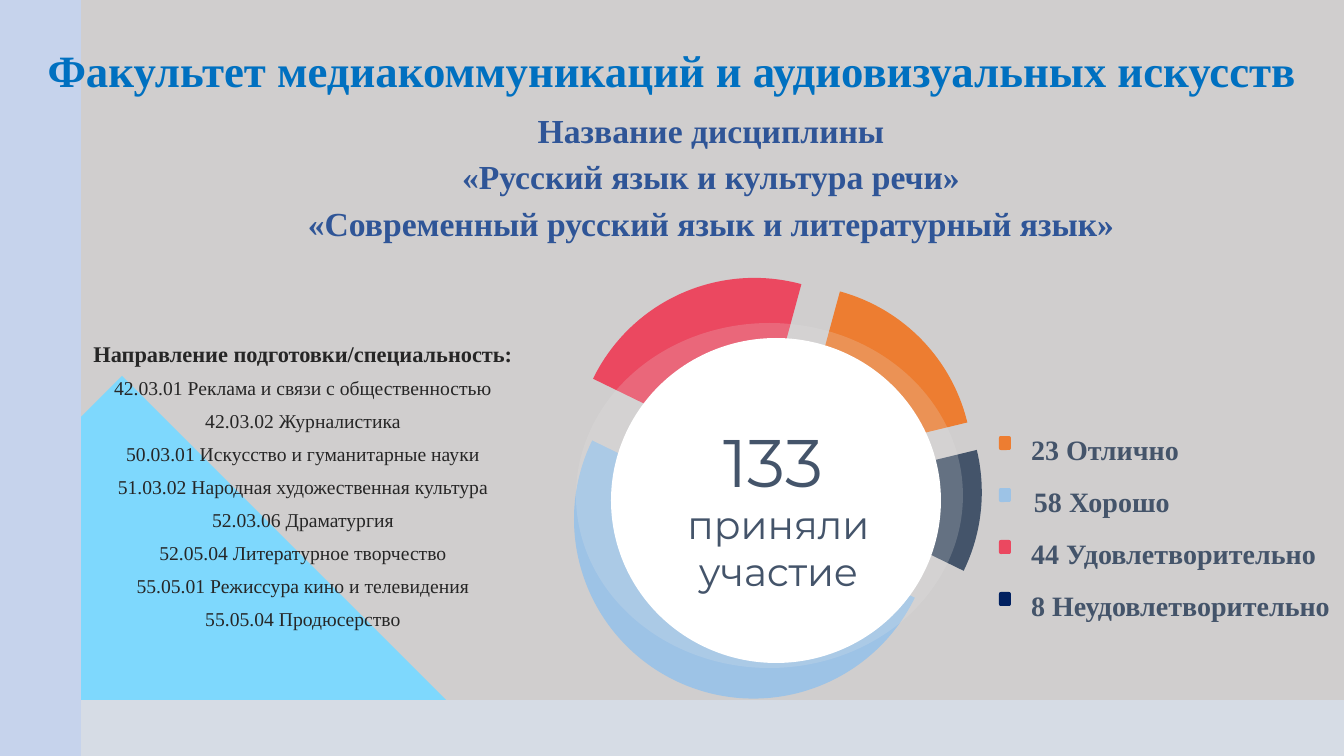
from dataclasses import dataclass

from lxml import etree
from pptx import Presentation, util as u
from pptx.chart.data import CategoryChartData
from pptx.dml.color import RGBColor
from pptx.enum import chart as charts, shapes, text
from pptx.oxml.ns import qn


@dataclass(frozen=True)
class Theme:
    serif: str = "Times New Roman"
    sans: str = "Montserrat"
    background: str = "D0CECE"
    triangle: str = "7ED8FD"
    bottom_band: str = "D6DCE5"
    side_band: str = "C6D3EC"
    title: str = "0070C0"
    discipline: str = "2F5597"
    body: str = "262626"
    slate: str = "44546A"
    orange: str = "ED7D31"
    blue: str = "9DC3E6"
    red: str = "EB4860"
    navy: str = "002060"
    halo: str = "E7E6E6"
    white: str = "FFFFFF"
    title_size: int = 32
    discipline_size: int = 24
    heading_size: int = 16
    body_size: int = 14
    legend_size: int = 20
    total_size: int = 48
    caption_size: int = 28


THEME = Theme()

# Content
TITLE = "Факультет медиакоммуникаций и аудиовизуальных искусств"
DISCIPLINES = [
    "Название дисциплины",
    "«Русский язык и культура речи»",
    "«Современный русский язык и литературный язык»",
]
PROGRAMMES_HEADING = "Направление подготовки/специальность:"
PROGRAMMES = [
    "42.03.01 Реклама и связи с общественностью",
    "42.03.02 Журналистика",
    "50.03.01 Искусство и гуманитарные науки",
    "51.03.02 Народная художественная культура",
    "52.03.06 Драматургия",
    "52.05.04 Литературное творчество",
    "55.05.01 Режиссура кино и телевидения",
    "55.05.04 Продюсерство",
]
TOTAL = "133"
TOTAL_CAPTION = ["приняли ", "участие"]
GRADE_SHARES = [
    ("1", 50, THEME.blue),
    ("2", 22, THEME.red),
    ("3", 17, THEME.orange),
    ("4", 11, THEME.slate),
]
LEGEND = [
    ("23 Отлично", THEME.orange, 1021),
    ("58 Хорошо", THEME.blue, 1024),
    ("44 Удовлетворительно", THEME.red, 1021),
    ("8 Неудовлетворительно", THEME.navy, 1021),
]

# Geometry
WIDTH, HEIGHT = 1344, 756
PX = u.Inches(1) / 100.8
SIDE_WIDTH, BOTTOM_TOP = 81, 700
TRIANGLE = [(81, 417), (122, 376), (446, 700), (81, 700)]
LEGEND_TOP, LEGEND_STEP = 436, 52


def px(*lengths):
    return [round(length * PX) for length in lengths]


def paint(shape, color, alpha=None):
    shape.shadow.inherit = False
    shape.fill.solid()
    shape.fill.fore_color.rgb = RGBColor.from_string(color)
    shape.line.fill.background()
    if alpha is not None:
        clr = shape.fill._xPr.find(".//" + qn("a:srgbClr"))
        etree.SubElement(clr, qn("a:alpha")).set("val", str(alpha * 1000))


def add_block(slide, kind, box, color, alpha=None):
    paint(slide.shapes.add_shape(kind, *px(*box)), color, alpha)


def write(shape, paragraphs, *, font, color, bold=False, spacing=1.0,
          after=0, align=text.PP_ALIGN.CENTER, inset=(0, 0, 0, 0)):
    """Each paragraph is a list of (words, size) or (words, size, bold) runs."""
    frame = shape.text_frame
    frame.word_wrap = True
    frame.auto_size = text.MSO_AUTO_SIZE.NONE
    frame.vertical_anchor = text.MSO_ANCHOR.TOP
    (frame.margin_left, frame.margin_top,
     frame.margin_right, frame.margin_bottom) = px(*inset)
    for i, runs in enumerate(paragraphs):
        par = frame.add_paragraph() if i else frame.paragraphs[0]
        par.alignment, par.line_spacing = align, spacing
        par.space_before, par.space_after = u.Pt(0), u.Pt(after)
        if shape.is_placeholder:
            props = par._p.get_or_add_pPr()
            props.set("marL", "0")
            props.set("indent", "0")
            etree.SubElement(props, qn("a:buNone"))
        for words, size, *weight in runs:
            run = par.add_run()
            run.text = words
            run.font.name, run.font.size = font, u.Pt(size)
            run.font.bold = weight[0] if weight else bold
            run.font.color.rgb = RGBColor.from_string(color)


def place(slide, placeholder, box):
    """Position a placeholder and bring it in front of the decoration."""
    (placeholder.left, placeholder.top,
     placeholder.width, placeholder.height) = px(*box)
    slide.shapes._spTree.append(placeholder._element)
    return placeholder


def add_grades_chart(slide):
    data = CategoryChartData()
    data.categories = [name for name, _, _ in GRADE_SHARES]
    data.add_series("Series 1", [share for _, share, _ in GRADE_SHARES])
    chart = slide.shapes.add_chart(
        charts.XL_CHART_TYPE.PIE, *px(516, 261, 505, 455), data).chart
    chart.has_legend = chart.has_title = False
    chart.font.name, chart.font.size = "Calibri", u.Pt(10)
    chart.font.color.rgb = RGBColor(0, 0, 0)
    pie = chart.plots[0]
    pie.vary_by_categories = False
    grades = pie.series[0]
    for i, (_, _, color) in enumerate(GRADE_SHARES):
        fmt = grades.points[i].format
        fmt.fill.solid()
        fmt.fill.fore_color.rgb = RGBColor.from_string(color)
        fmt.line.fill.background()
    # Slice explosion and start angle
    explosion = etree.Element(qn("c:explosion"))
    explosion.set("val", "19")
    grades._element.find(qn("c:dPt")).addprevious(explosion)
    angle = etree.SubElement(pie._element, qn("c:firstSliceAng"))
    angle.set("val", "116")


def main():
    prs = Presentation()
    prs.slide_width, prs.slide_height = px(WIDTH, HEIGHT)
    slide = prs.slides.add_slide(prs.slide_layouts.get_by_name("Two Content"))
    title, disciplines, programmes = slide.placeholders
    slide.background.fill.solid()
    slide.background.fill.fore_color.rgb = RGBColor.from_string(THEME.background)
    kind = shapes.MSO_SHAPE

    # Decoration
    builder = slide.shapes.build_freeform(*TRIANGLE[0], scale=PX)
    builder.add_line_segments(TRIANGLE[1:], close=True)
    paint(builder.convert_to_shape(), THEME.triangle)
    add_block(slide, kind.RECTANGLE,
              (0, BOTTOM_TOP, WIDTH, HEIGHT - BOTTOM_TOP), THEME.bottom_band)
    add_block(slide, kind.RECTANGLE, (0, 0, SIDE_WIDTH, HEIGHT), THEME.side_band)

    # Grades ring
    add_grades_chart(slide)
    add_block(slide, kind.OVAL, (576, 323, 387, 345), THEME.halo, alpha=20)
    add_block(slide, kind.OVAL, (611, 338, 330, 325), THEME.white)
    total = slide.shapes.add_textbox(*px(674, 415, 209, 187))
    write(total, [[(TOTAL, THEME.total_size), (" ", THEME.caption_size)]]
          + [[(line, THEME.caption_size)] for line in TOTAL_CAPTION],
          font=THEME.sans, color=THEME.slate, inset=(10, 5, 10, 5))

    # Legend
    for i, (label, color, left) in enumerate(LEGEND):
        top = LEGEND_TOP + i * LEGEND_STEP
        add_block(slide, kind.ROUNDED_RECTANGLE, (999, top, 12, 14), color)
        grade = slide.shapes.add_textbox(*px(left, top - 9, WIDTH - left, 49))
        write(grade, [[(label, THEME.legend_size)]], font=THEME.serif,
              color=THEME.slate, bold=True, align=text.PP_ALIGN.LEFT,
              inset=(10, 5, 0, 5))

    # Title and lists
    write(place(slide, title, (0, 34, WIDTH, 80)), [[(TITLE, THEME.title_size)]],
          font=THEME.serif, color=THEME.title, bold=True, spacing=1.16, after=12)
    write(place(slide, programmes, (50, 329, 506, 304)),
          [[(PROGRAMMES_HEADING, THEME.heading_size, True)]]
          + [[(line, THEME.body_size)] for line in PROGRAMMES],
          font=THEME.serif, color=THEME.body, spacing=1.4)
    write(place(slide, disciplines, (39, 103, WIDTH, 142)),
          [[(line, THEME.discipline_size)] for line in DISCIPLINES],
          font=THEME.serif, color=THEME.discipline, bold=True, spacing=1.16)
    prs.save("out.pptx")


if __name__ == "__main__":
    main()
